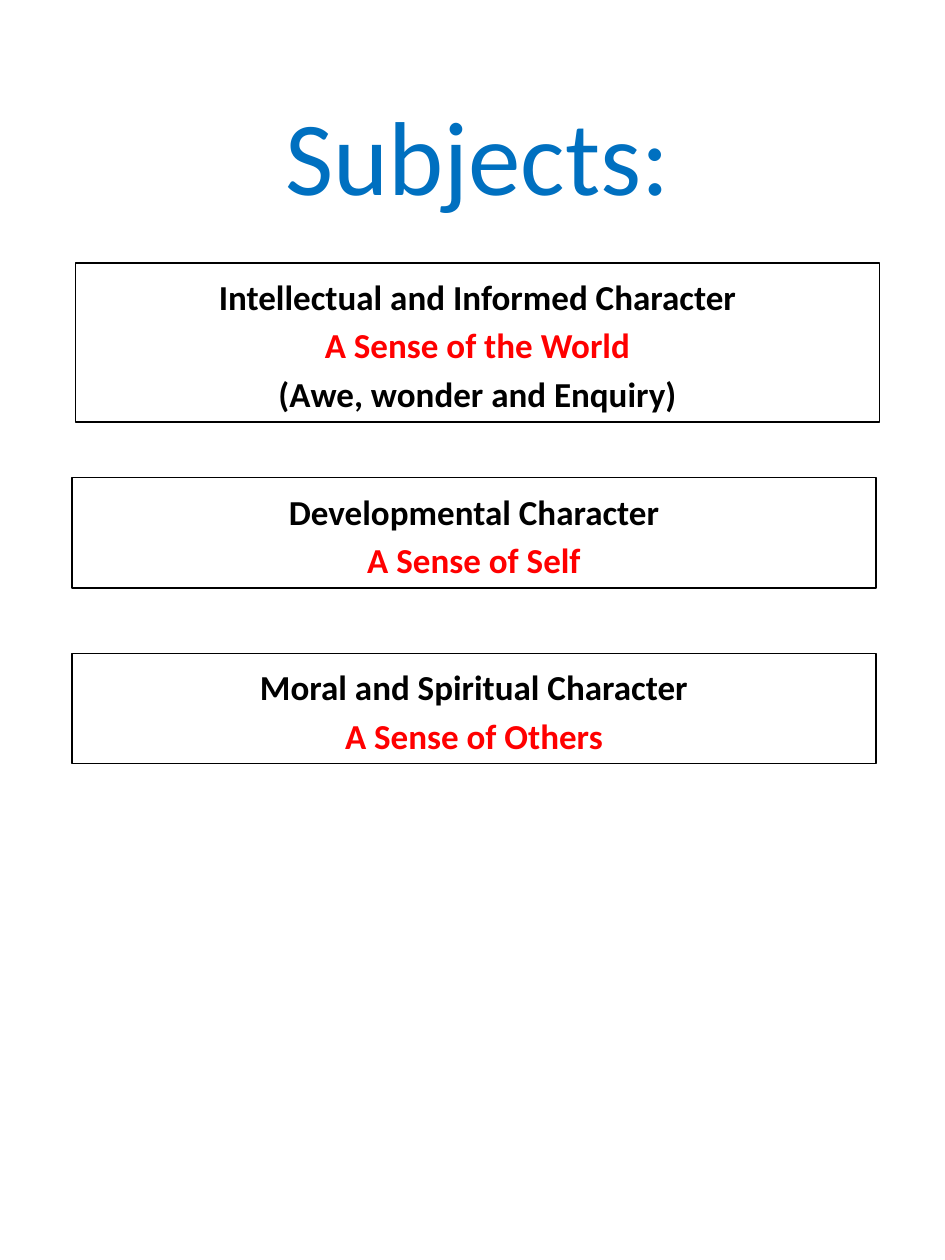
import pptx
import pptx.util
import pptx.dml.color
import pptx.enum.shapes
import pptx.enum.text
from pptx.util import Pt

BLACK, RED, BLUE, WHITE = "000000", "FF0000", "0070C0", "FFFFFF"


def color(value):
    return pptx.dml.color.RGBColor.from_string(value)


def format_paragraph(paragraph, size, hex_color, bold):
    paragraph.alignment = pptx.enum.text.PP_ALIGN.CENTER
    for run in paragraph.runs:
        run.font.name = "Calibri"
        run.font.size = Pt(size)
        run.font.bold = bold
        run.font.color.rgb = color(hex_color)


def place_title(slide, text, left, top, width, height):
    title = slide.shapes.title
    title.left, title.top = Pt(left), Pt(top)
    title.width, title.height = Pt(width), Pt(height)
    frame = title.text_frame
    frame.text = text
    frame.word_wrap = True
    frame.auto_size = pptx.enum.text.MSO_AUTO_SIZE.NONE
    frame.vertical_anchor = pptx.enum.text.MSO_ANCHOR.TOP
    format_paragraph(frame.paragraphs[0], 60, BLUE, False)


def add_subject(slide, lines, left, top, width, height):
    """Add a bordered box whose second line is the red subject name."""
    box = slide.shapes.add_shape(
        pptx.enum.shapes.MSO_SHAPE.RECTANGLE,
        Pt(left), Pt(top), Pt(width), Pt(height))
    box.shadow.inherit = False
    box.fill.solid()
    box.fill.fore_color.rgb = color(WHITE)
    box.line.color.rgb = color(BLACK)
    box.line.width = Pt(0.75)
    frame = box.text_frame
    frame.text = "\n".join(lines)
    frame.word_wrap = True
    frame.auto_size = pptx.enum.text.MSO_AUTO_SIZE.SHAPE_TO_FIT_TEXT
    frame.vertical_anchor = pptx.enum.text.MSO_ANCHOR.TOP
    for index, paragraph in enumerate(frame.paragraphs):
        paragraph.line_spacing = 1.15
        format_paragraph(paragraph, 20, RED if index == 1 else BLACK, True)


def main():
    presentation = pptx.Presentation()
    presentation.slide_width, presentation.slide_height = Pt(540), Pt(720)
    slide = presentation.slides.add_slide(presentation.slide_layouts[5])
    place_title(slide, "Subjects:", 136.8, 48.24, 272.16, 80)

    subjects = [
        (43.2, 150.25, 90.9, ["Intellectual and Informed Character",
                              "A Sense of the World",
                              "(Awe, wonder and Enquiry)"]),
        (41.2, 272.9, 63.2, ["Developmental Character", "A Sense of Self"]),
        (41.2, 373.3, 63.2, ["Moral and Spiritual Character",
                             "A Sense of Others"]),
    ]
    for left, top, height, lines in subjects:
        add_subject(slide, lines, left, top, 459.36, height)
    presentation.save("out.pptx")


if __name__ == "__main__":
    main()
